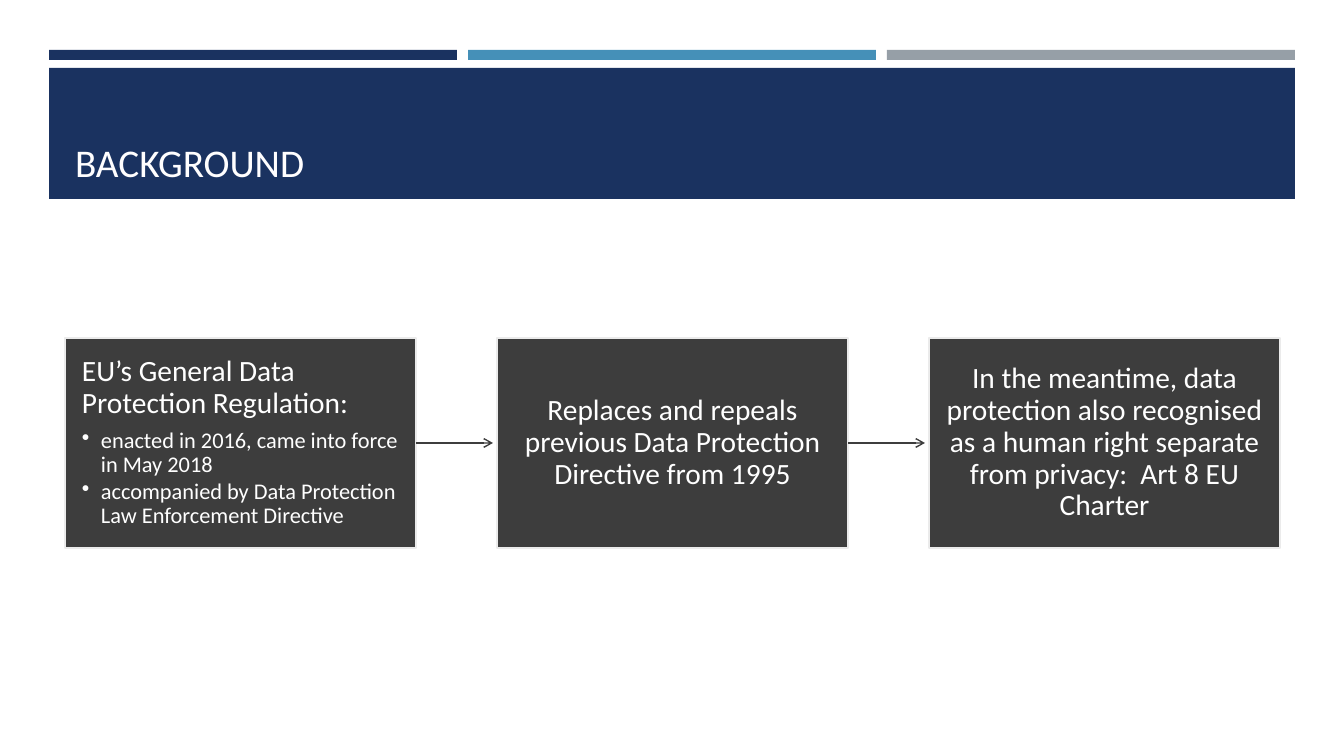
from dataclasses import dataclass

from lxml.etree import SubElement
from pptx import Presentation
from pptx.dml.color import RGBColor
from pptx.enum.shapes import MSO_CONNECTOR, MSO_SHAPE
from pptx.enum.text import MSO_ANCHOR, MSO_AUTO_SIZE, PP_ALIGN
from pptx.oxml.ns import qn
from pptx.shapes.autoshape import Shape
from pptx.slide import Slide
from pptx.text.text import Font
from pptx.util import Emu, Pt

EMU_PER_PX = 12192000 / 1344
FONT = "Calibri"
NAVY, BLUE, GREY = "1A3260", "4590B8", "969FA7"
CHARCOAL, PALE, WHITE, TITLE_WHITE = "3D3D3D", "EBEBEB", "FFFFFF", "FFFEFF"

BAR_LEFT, BAR_STEP = 49, 419
BOX_LEFT, BOX_TOP, BOX_WIDTH, BOX_HEIGHT, BOX_STEP = 65, 338, 351, 210, 432
ARROW_LENGTH = 77
BULLET_INDENT = 19


@dataclass(frozen=True)
class Step:
    text: str
    bullets: tuple[str, ...] = ()


STEPS = (
    Step(
        "EU’s General Data Protection Regulation:",
        (
            "enacted in 2016, came into force in May 2018",
            "accompanied by Data Protection Law Enforcement Directive",
        ),
    ),
    Step("Replaces and repeals previous Data Protection Directive from 1995"),
    Step(
        "In the meantime, data protection also recognised as a human right "
        "separate from privacy:  Art 8 EU Charter"
    ),
)


def px(length: int) -> Emu:
    return Emu(round(length * EMU_PER_PX))


def color(value: str) -> RGBColor:
    return RGBColor.from_string(value)


def style_font(font: Font, size: int, value: str) -> None:
    font.name = FONT
    font.size = Pt(size)
    font.color.rgb = color(value)


def add_rectangle(
    page: Slide, left: int, top: int, width: int, height: int, fill: str
) -> Shape:
    box = page.shapes.add_shape(
        MSO_SHAPE.RECTANGLE, px(left), px(top), px(width), px(height)
    )
    box.shadow.inherit = False
    box.fill.solid()
    box.fill.fore_color.rgb = color(fill)
    box.line.fill.background()
    return box


def add_header(page: Slide) -> None:
    for index, fill in enumerate((NAVY, BLUE, GREY)):
        add_rectangle(page, BAR_LEFT + index * BAR_STEP, 50, 408, 10, fill)
    add_rectangle(page, BAR_LEFT, 68, 1246, 131, NAVY)

    title = page.shapes.title
    title.left, title.top, title.width, title.height = map(px, (65, 78, 1216, 112))
    frame = title.text_frame
    frame.auto_size = MSO_AUTO_SIZE.NONE
    frame.vertical_anchor = MSO_ANCHOR.BOTTOM
    frame.text = "BACKGROUND"
    para = frame.paragraphs[0]
    para.alignment = PP_ALIGN.LEFT
    style_font(para.font, 28, TITLE_WHITE)
    # Bring the title in front of its band.
    page.shapes.element.append(title.element)


def add_step(page: Slide, step: Step, left: int) -> Shape:
    box = add_rectangle(page, left, BOX_TOP, BOX_WIDTH, BOX_HEIGHT, CHARCOAL)
    box.line.color.rgb = color(PALE)
    box.line.width = Pt(2)

    frame = box.text_frame
    frame.word_wrap = True
    frame.margin_left = frame.margin_right = px(17)
    frame.margin_top = frame.margin_bottom = px(18)
    frame.vertical_anchor = MSO_ANCHOR.TOP if step.bullets else MSO_ANCHOR.MIDDLE

    para = frame.paragraphs[0]
    para.text = step.text
    para.alignment = PP_ALIGN.LEFT if step.bullets else PP_ALIGN.CENTER
    para.line_spacing = 0.9
    para.space_after = Pt(7)
    style_font(para.font, 21, WHITE)

    for bullet in step.bullets:
        para = frame.add_paragraph()
        para.text = bullet
        para.level = 1
        para.alignment = PP_ALIGN.LEFT
        para.line_spacing = 0.9
        para.space_after = Pt(2)
        style_font(para.font, 16, WHITE)
        properties = para._p.get_or_add_pPr()
        properties.set("marL", str(px(BULLET_INDENT)))
        properties.set("indent", str(-px(BULLET_INDENT)))
        SubElement(properties, qn("a:buChar"), char="•")
        # The schema wants the bullet before the default run properties.
        properties.append(properties.find(qn("a:defRPr")))
    return box


def add_arrow(page: Slide, box: Shape) -> None:
    """Draw an arrow from the right side of the box."""
    start = box.left + box.width
    middle = box.top + box.height // 2
    arrow = page.shapes.add_connector(
        MSO_CONNECTOR.STRAIGHT, start, middle, start + px(ARROW_LENGTH), middle
    )
    arrow.begin_connect(box, 3)
    arrow.line.color.rgb = color(CHARCOAL)
    arrow.line.width = Pt(1)
    SubElement(arrow.line._get_or_add_ln(), qn("a:tailEnd"), type="arrow")
    SubElement(arrow._element.spPr, qn("a:effectLst"))


def main() -> None:
    deck = Presentation()
    deck.slide_width, deck.slide_height = px(1344), px(756)
    page = deck.slides.add_slide(deck.slide_layouts.get_by_name("Title Only"))
    add_header(page)
    boxes = [
        add_step(page, step, BOX_LEFT + index * BOX_STEP)
        for index, step in enumerate(STEPS)
    ]
    for box in boxes[:-1]:
        add_arrow(page, box)
    deck.save("out.pptx")


if __name__ == "__main__":
    main()
